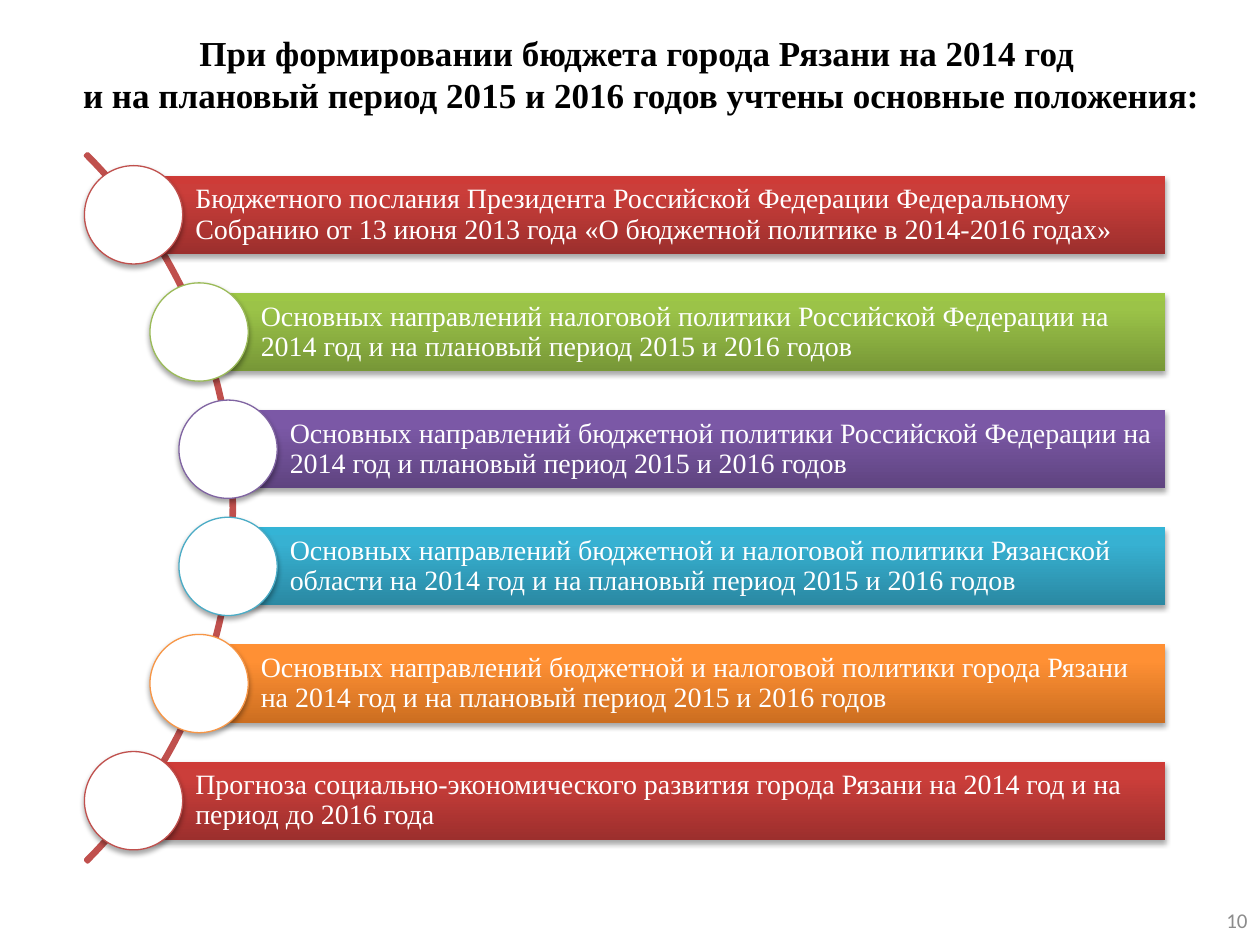
import pptx
import pptx.dml.color
import pptx.enum.shapes
import pptx.enum.text
import pptx.oxml
import pptx.oxml.ns
import pptx.util
from pptx.util import Inches

SHAPES = pptx.enum.shapes.MSO_SHAPE
ALIGN = pptx.enum.text.PP_ALIGN
MIDDLE = pptx.enum.text.MSO_ANCHOR.MIDDLE
NAMESPACE = pptx.oxml.ns.nsdecls("a")

TITLE = [
    "При формировании бюджета города Рязани на 2014 год ",
    "и на плановый период 2015 и 2016 годов учтены основные положения:",
]

# Outline colour and gradient colours from bottom to top
RED = ("C0504D", ["9C2F2D", "CB3E3A", "CE3B37"])
GREEN = ("9BBB59", ["779737", "9BC348", "9DC746"])
PURPLE = ("8064A2", ["5F4480", "7B58A6", "7C57A8"])
BLUE = ("4BACC6", ["2A88A2", "37B1D2", "34B4D6"])
ORANGE = ("F79646", ["CC6E20", "FF9034", "FF9136"])

# Bar left edge, palette, text
PROVISIONS = [
    (1.06, RED, "Бюджетного послания Президента Российской Федерации Федеральному "
                "Собранию от 13 июня 2013 года «О бюджетной политике в 2014-2016 годах»"),
    (1.58, GREEN, "Основных направлений налоговой политики Российской Федерации на "
                  "2014 год и на плановый период 2015 и 2016 годов"),
    (1.81, PURPLE, "Основных направлений бюджетной политики Российской Федерации на "
                   "2014 год и плановый период 2015 и 2016 годов"),
    (1.81, BLUE, "Основных направлений бюджетной и налоговой политики Рязанской "
                 "области на 2014 год и на плановый период 2015 и 2016 годов"),
    (1.58, ORANGE, "Основных направлений бюджетной и налоговой политики города Рязани "
                   "на 2014 год и на плановый период 2015 и 2016 годов"),
    (1.06, RED, "Прогноза социально-экономического развития города Рязани на 2014 год "
                "и на период до 2016 года"),
]

CENTER_Y = 4.03
ROW_PITCH = 0.93
BAR_RIGHT = 9.25
BAR_HEIGHT = 0.62
CIRCLE_SIZE = 0.78
ARC_SIZE = 7.95


def color(value):
    return pptx.dml.color.RGBColor.from_string(value)


class SlideBuilder:
    serif = "Times New Roman"
    sans = "Calibri"

    def __init__(self, slide):
        self.slide = slide

    def format_text(self, paragraph, size, font_name, hex_color, align, bold=False):
        paragraph.alignment = align
        font = paragraph.font
        font.size = pptx.util.Pt(size)
        font.name = font_name
        font.bold = bold
        font.color.rgb = color(hex_color)

    def title(self, lines, left, top, width, height):
        shape = self.slide.shapes.title
        shape.left, shape.top = Inches(left), Inches(top)
        shape.width, shape.height = Inches(width), Inches(height)
        frame = shape.text_frame
        frame.text = "\n".join(lines)
        frame.auto_size = pptx.enum.text.MSO_AUTO_SIZE.NONE
        frame.vertical_anchor = MIDDLE
        for paragraph in frame.paragraphs:
            self.format_text(paragraph, 20, self.serif, "000000", ALIGN.CENTER, True)

    def shape(self, kind, left, top, width, height):
        shape = self.slide.shapes.add_shape(
            kind, Inches(left), Inches(top), Inches(width), Inches(height))
        shape.shadow.inherit = False
        return shape

    def outline(self, shape, hex_color, width):
        shape.line.color.rgb = color(hex_color)
        shape.line.width = pptx.util.Pt(width)

    def drop_shadow(self, shape):
        effects = shape.element.spPr.find(pptx.oxml.ns.qn("a:effectLst"))
        effects.append(pptx.oxml.parse_xml(
            f'<a:outerShdw {NAMESPACE} blurRad="{pptx.util.Pt(3.1)}" '
            f'dist="{pptx.util.Pt(1.8)}" dir="5400000" rotWithShape="0">'
            '<a:srgbClr val="000000"><a:alpha val="35000"/></a:srgbClr></a:outerShdw>'))

    def gradient(self, shape, colors):
        shape.fill.gradient()
        shape.fill.gradient_angle = 90
        stops = shape.element.spPr.find(".//" + pptx.oxml.ns.qn("a:gsLst"))
        stops.clear()
        for position, value in zip((0, 80, 100), colors):
            stops.append(pptx.oxml.parse_xml(
                f'<a:gs {NAMESPACE} pos="{position * 1000}">'
                f'<a:srgbClr val="{value}"/></a:gs>'))

    def arc(self, center_y, left, size, hex_color):
        shape = self.shape(SHAPES.BLOCK_ARC, left, center_y - size / 2, size, size)
        for index, value in enumerate((189, 27, 0.003)):
            shape.adjustments[index] = value
        shape.fill.background()
        self.outline(shape, hex_color, 2)

    def bar(self, left, center_y, colors, text):
        shape = self.shape(SHAPES.RECTANGLE, left, center_y - BAR_HEIGHT / 2,
                           BAR_RIGHT - left, BAR_HEIGHT)
        self.gradient(shape, colors)
        shape.line.fill.background()
        self.drop_shadow(shape)
        frame = shape.text_frame
        frame.text = text
        frame.word_wrap = True
        frame.vertical_anchor = MIDDLE
        frame.margin_left = Inches(0.49)
        frame.margin_top = frame.margin_right = frame.margin_bottom = Inches(0.04)
        paragraph = frame.paragraphs[0]
        paragraph.line_spacing = 0.9
        self.format_text(paragraph, 16, self.serif, "FFFFFF", ALIGN.LEFT)

    def circle(self, center_x, center_y, hex_color):
        shape = self.shape(SHAPES.OVAL, center_x - CIRCLE_SIZE / 2,
                           center_y - CIRCLE_SIZE / 2, CIRCLE_SIZE, CIRCLE_SIZE)
        shape.fill.solid()
        shape.fill.fore_color.rgb = color("FFFFFF")
        self.outline(shape, hex_color, 0.75)
        self.drop_shadow(shape)

    def page_number(self, text, left, top, width, height):
        box = self.slide.shapes.add_textbox(
            Inches(left), Inches(top), Inches(width), Inches(height))
        frame = box.text_frame
        frame.text = text
        frame.word_wrap = True
        frame.vertical_anchor = MIDDLE
        self.format_text(frame.paragraphs[0], 12, self.sans, "8C8C8C", ALIGN.RIGHT)


def main():
    presentation = pptx.Presentation()
    presentation.slide_width = Inches(10)
    presentation.slide_height = Inches(7.5)
    slide = presentation.slides.add_slide(presentation.slide_layouts[5])
    builder = SlideBuilder(slide)

    # Heading
    builder.title(TITLE, 0.53, 0.17, 9.12, 0.83)

    # Arc with the list of provisions along it
    builder.arc(CENTER_Y, -6.09, ARC_SIZE, RED[0])
    middle_row = (len(PROVISIONS) - 1) / 2
    for row, (left, (outline, colors), text) in enumerate(PROVISIONS):
        center_y = CENTER_Y + (row - middle_row) * ROW_PITCH
        builder.bar(left, center_y, colors, text)
        builder.circle(left, center_y, outline)

    # Page number
    builder.page_number("10", 7.67, 7.1, 2.33, 0.4)
    presentation.save("out.pptx")


if __name__ == "__main__":
    main()
